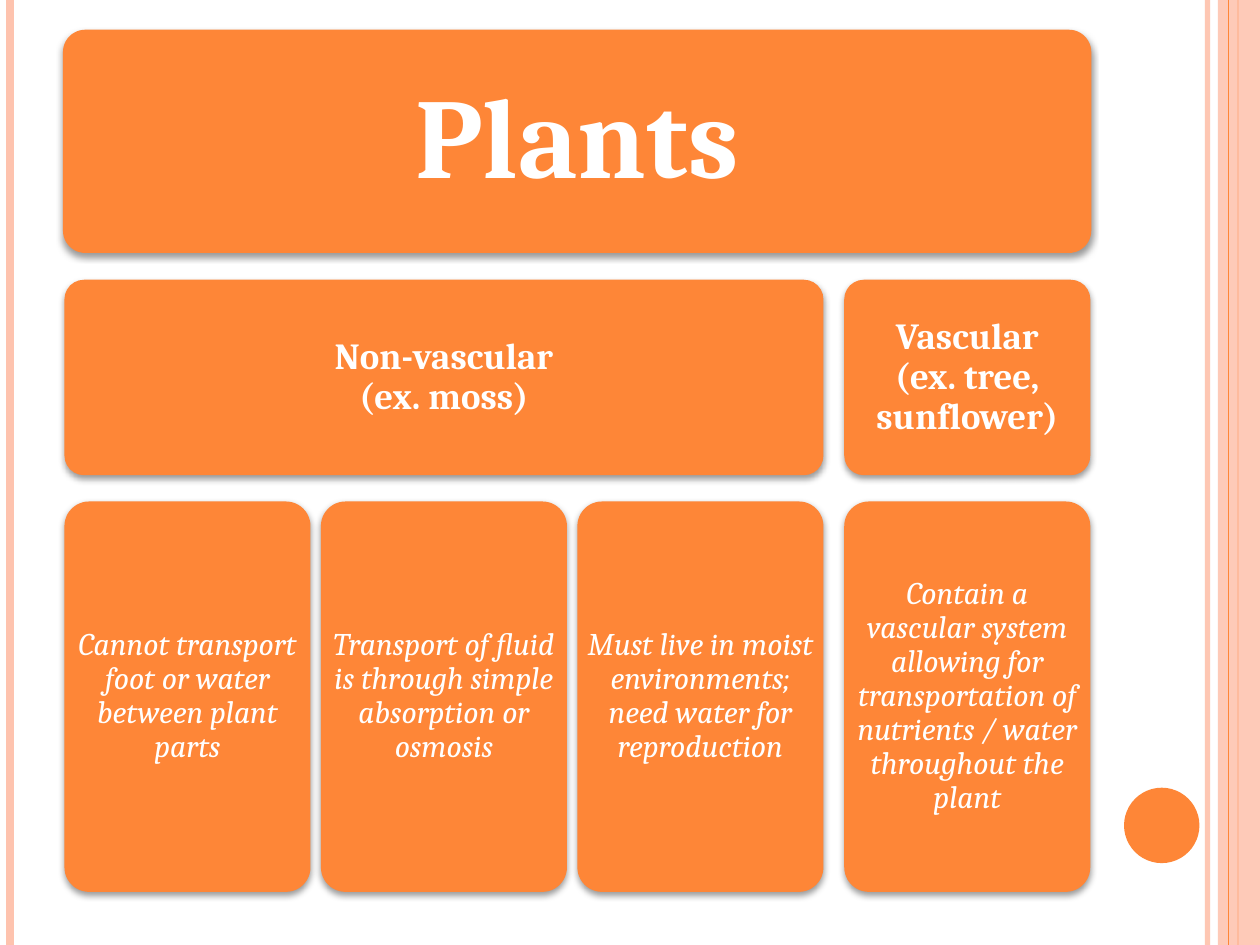
from pptx import Presentation
from pptx.dml.color import RGBColor
from pptx.enum.shapes import MSO_CONNECTOR, MSO_SHAPE
from pptx.enum.text import MSO_ANCHOR, PP_ALIGN
from pptx.oxml import parse_xml
from pptx.oxml.ns import nsdecls, qn
from pptx.util import Cm, Pt

ORANGE = RGBColor(0xFE, 0x86, 0x37)
PEACH = RGBColor(0xFE, 0xC3, 0xAE)
WHITE = RGBColor(0xFF, 0xFF, 0xFF)
RECT, OVAL, ROUND = MSO_SHAPE.RECTANGLE, MSO_SHAPE.OVAL, MSO_SHAPE.ROUNDED_RECTANGLE
STRAIGHT = MSO_CONNECTOR.STRAIGHT
CENTER, MIDDLE = PP_ALIGN.CENTER, MSO_ANCHOR.MIDDLE
WIDE, HIGH = 25.4, 19.05

SHADOW = f"""<a:outerShdw {nsdecls('a')} blurRad="50800" dist="25400" dir="5400000"
 algn="ctr" rotWithShape="0"><a:srgbClr val="000000"><a:alpha val="40000"/></a:srgbClr>
</a:outerShdw>"""


class Page:
    font = "Cambria"

    def __init__(self, slide):
        self.slide = slide

    def fade(self, item, share):
        """Set the opacity, in percent, of the item's one colour."""
        tone = next(item._element.spPr.iter(qn("a:srgbClr")))
        tone.append(parse_xml(f'<a:alpha {nsdecls("a")} val="{share * 1000}"/>'))

    def rule(self, x, color, width):
        line = self.slide.shapes.add_connector(STRAIGHT, Cm(x), 0, Cm(x), Cm(HIGH))
        line.line.color.rgb = color
        line.line.width = Pt(width)
        line._element.spPr.append(parse_xml(f'<a:effectLst {nsdecls("a")}/>'))
        return line

    def shape(self, kind, x, y, w, h, color):
        item = self.slide.shapes.add_shape(kind, Cm(x), Cm(y), Cm(w), Cm(h))
        item.fill.solid()
        item.fill.fore_color.rgb = color
        item.line.fill.background()
        item.shadow.inherit = False
        return item

    def card(self, x, y, w, h, text, size, pad, bold=False, italic=False):
        item = self.shape(ROUND, x, y, w, h, ORANGE)
        item.adjustments[0] = 0.1
        item._element.spPr.find(qn("a:effectLst")).append(parse_xml(SHADOW))
        frame = item.text_frame
        frame.word_wrap = True
        frame.vertical_anchor = MIDDLE
        frame.margin_left = frame.margin_right = Cm(pad)
        frame.margin_top = frame.margin_bottom = Cm(pad)
        para = frame.paragraphs[0]
        para.alignment = CENTER
        para.line_spacing = 0.9
        for i, part in enumerate(text.split("\n")):
            if i:
                para.add_line_break()
            run = para.add_run()
            run.text = part
            font = run.font
            font.name, font.size = self.font, Pt(size)
            font.bold, font.italic = bold, italic
            font.color.rgb = WHITE


def main():
    deck = Presentation()
    deck.slide_width, deck.slide_height = Cm(WIDE), Cm(HIGH)
    page = Page(deck.slides.add_slide(deck.slide_layouts[6]))

    # Side stripes and dot
    page.fade(page.rule(24.34, PEACH, 3), 93)
    page.rule(0.2, PEACH, 4.5)
    page.rule(24.96, ORANGE, 1.5)
    page.fade(page.shape(RECT, 24.55, 0, WIDE - 24.55, HIGH, PEACH), 87)
    page.rule(24.77, ORANGE, 0.75)
    page.shape(OVAL, 22.66, 15.88, 1.52, 1.52, ORANGE)

    # Top of the tree
    page.card(1.27, 0.6, 20.73, 4.5, "Plants", 65, 0.55, bold=True)

    # Groups, each as wide as the facts below it
    tree = [
        ("Non-vascular\n(ex. moss)", [
            "Cannot transport foot or water between plant parts",
            "Transport of fluid is through simple absorption or osmosis",
            "Must live in moist environments; need water for reproduction"]),
        ("Vascular\n(ex. tree, sunflower)", [
            "Contain a vascular system allowing for transportation of "
            "nutrients / water throughout the plant"]),
    ]
    left, col, gap, split = 1.3, 4.96, 0.21, 0.42
    for name, facts in tree:
        span = len(facts) * (col + gap) - gap
        page.card(left, 5.64, span, 3.94, name, 21, 0.11, bold=True)
        for i, fact in enumerate(facts):
            page.card(left + i * (col + gap), 10.11, col, 7.87, fact, 18, 0.03,
                      italic=True)
        left += span + split

    deck.save("out.pptx")


if __name__ == "__main__":
    main()
